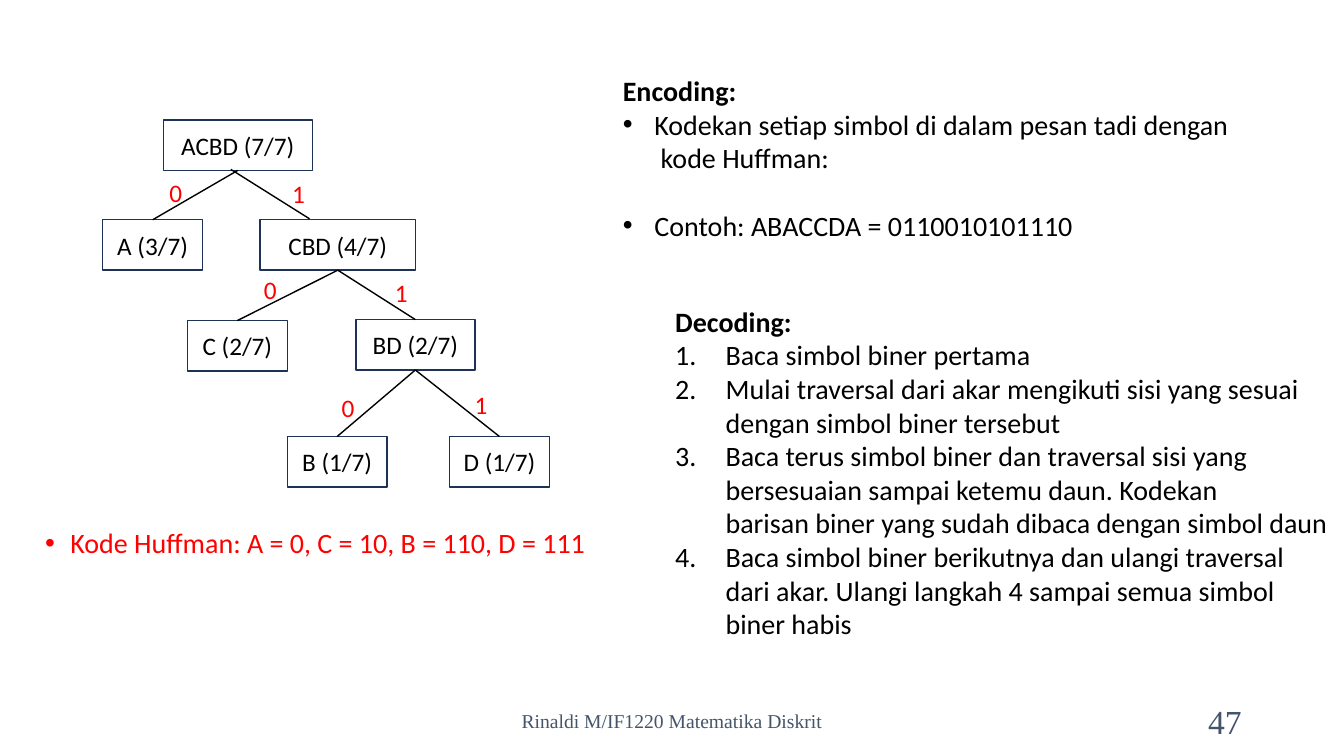
from dataclasses import dataclass

from lxml import etree
from pptx import Presentation
from pptx.dml.color import RGBColor
from pptx.enum import shapes, text
from pptx.oxml import ns
from pptx.util import Pt


@dataclass(frozen=True)
class Theme:
    ink: str = "000000"
    accent: str = "FF0000"
    outline: str = "1E3256"
    muted: str = "44546A"
    font: str = "Calibri"
    footer_font: str = "Times New Roman"
    body: int = 20
    node: int = 18
    footer: int = 14
    number: int = 24


THEME = Theme()
NODE_HEIGHT = 36
BULLET = ("buChar", {"char": "•"})
NUMBER = ("buAutoNum", {"type": "arabicPeriod"})

# Name: left, top, width, label
NODES = {
    "ACBD": (43.2, 0, 106.6, "ACBD (7/7)"),
    "A": (0, 71.3, 71.3, "A (3/7)"),
    "CBD": (112.4, 71.3, 111, "CBD (4/7)"),
    "C": (60.5, 143.3, 71.3, "C (2/7)"),
    "BD": (180.8, 142.6, 85, "BD (2/7)"),
    "B": (131.8, 226.1, 71.3, "B (1/7)"),
    "D": (247.7, 226.1, 71.3, "D (1/7)"),
}
# Parent, child, bit, left and top of the bit
EDGES = [
    ("ACBD", "A", "0", 40.4, 37.4),
    ("ACBD", "CBD", "1", 128.2, 38.1),
    ("CBD", "C", "0", 108, 106.6),
    ("CBD", "BD", "1", 201.6, 108.7),
    ("BD", "B", "0", 163.5, 190.8),
    ("BD", "D", "1", 258.5, 188.6),
]
# The edge from the root to CBD runs between points off the centres
ROOT_EDGE = (91.5, 35.3, 147.7, 70.6)

ENCODING = [
    ("Encoding:", dict(bold=True)),
    ("Kodekan setiap simbol di dalam pesan tadi dengan", dict(bullet=BULLET, left=22.5, hanging=22.5)),
    ("kode Huffman:", dict(left=27)),
    ("Contoh: ABACCDA = 0110010101110", dict(bullet=BULLET, left=22.5, hanging=22.5, before=24.4)),
]
STEPS = [
    "Baca simbol biner pertama",
    "Mulai traversal dari akar mengikuti sisi yang sesuai\vdengan simbol biner tersebut",
    "Baca terus simbol biner dan traversal sisi yang\vbersesuaian sampai ketemu daun. Kodekan\v"
    "barisan biner yang sudah dibaca dengan simbol daun",
    "Baca simbol biner berikutnya dan ulangi traversal\v"
    "dari akar. Ulangi langkah 4 sampai semua simbol\vbiner habis",
]
DECODING = [("Decoding:", dict(bold=True))] + [
    (step, dict(bullet=NUMBER, left=36, hanging=36)) for step in STEPS
]


def write(paragraph, content, *, size=THEME.body, color=THEME.ink, font=THEME.font, bold=False,
          align=text.PP_ALIGN.LEFT, bullet=None, left=0, hanging=0, before=0, spacing=None):
    """Fill one paragraph and format it."""
    paragraph.text = content
    paragraph.alignment = align
    properties = paragraph._p.get_or_add_pPr()
    if left:
        properties.set("marL", str(Pt(left)))
        properties.set("indent", str(-Pt(hanging)))
    if before:
        paragraph.space_before = Pt(before)
    if spacing:
        paragraph.line_spacing = spacing
    if bullet:
        tag, attributes = bullet
        if tag == "buChar":
            etree.SubElement(properties, ns.qn("a:buFont"), typeface="Arial")
        etree.SubElement(properties, ns.qn("a:" + tag), attributes)
    for run in paragraph.runs:
        run.font.size = Pt(size)
        run.font.name = font
        run.font.bold = bold
        run.font.color.rgb = RGBColor.from_string(color)


def add_text(slide, box, items, anchor=text.MSO_ANCHOR.TOP, wrap=True):
    """Add a text box with one paragraph for each (text, format) item."""
    frame = slide.shapes.add_textbox(*map(Pt, box)).text_frame
    frame.word_wrap = wrap
    frame.vertical_anchor = anchor
    for index, (content, style) in enumerate(items):
        paragraph = frame.add_paragraph() if index else frame.paragraphs[0]
        write(paragraph, content, **style)


def add_node(slide, left, top, width, label):
    node = slide.shapes.add_shape(
        shapes.MSO_SHAPE.RECTANGLE, Pt(left), Pt(top), Pt(width), Pt(NODE_HEIGHT))
    node.shadow.inherit = False
    node.fill.background()
    node.line.color.rgb = RGBColor.from_string(THEME.outline)
    node.line.width = Pt(1)
    node.text_frame.vertical_anchor = text.MSO_ANCHOR.MIDDLE
    node.text_frame.word_wrap = True
    write(node.text_frame.paragraphs[0], label, size=THEME.node, align=text.PP_ALIGN.CENTER)
    return node


def add_edge(slide, ends=(0, 0, 0, 0)):
    edge = slide.shapes.add_connector(shapes.MSO_CONNECTOR.STRAIGHT, *map(Pt, ends))
    edge.line.color.rgb = RGBColor.from_string(THEME.ink)
    edge.line.width = Pt(1)
    etree.SubElement(edge._element.spPr, ns.qn("a:effectLst"))
    return edge


def huffman_tree(slide, left, top):
    # Nodes
    nodes = {name: add_node(slide, left + x, top + y, width, label)
             for name, (x, y, width, label) in NODES.items()}
    # Edges and their bits
    for parent, child, bit, x, y in EDGES:
        if (parent, child) == ("ACBD", "CBD"):
            x1, y1, x2, y2 = ROOT_EDGE
            add_edge(slide, (left + x1, top + y1, left + x2, top + y2))
        else:
            edge = add_edge(slide)
            edge.begin_connect(nodes[parent], 2)
            edge.end_connect(nodes[child], 0)
        add_text(slide, (left + x, top + y, 24, 29),
                 [(bit, dict(size=THEME.node, color=THEME.accent))], wrap=False)


def code_summary(slide, box):
    add_text(slide, box, [("Kode Huffman: A = 0, C = 10, B = 110, D = 111",
                           dict(color=THEME.accent, bullet=BULLET, left=18, hanging=18, spacing=0.9))])


def footer(slide, left, top, height):
    style = dict(font=THEME.footer_font, color=THEME.muted)
    middle = text.MSO_ANCHOR.MIDDLE
    add_text(slide, (left, top, 324, height),
             [("Rinaldi M/IF1220 Matematika Diskrit",
               dict(style, size=THEME.footer, align=text.PP_ALIGN.CENTER))], middle)
    add_text(slide, (left + 360, top, 216, height),
             [("47", dict(style, size=THEME.number, align=text.PP_ALIGN.RIGHT))], middle)


def main():
    presentation = Presentation()
    presentation.slide_width, presentation.slide_height = Pt(960), Pt(540)
    slide = presentation.slides.add_slide(presentation.slide_layouts[6])

    footer(slide, 318, 500.4, 28.8)
    code_summary(slide, (25.2, 374.4, 499, 52))
    add_text(slide, (437.8, 49, 456, 128), ENCODING)
    add_text(slide, (475.2, 213.8, 484.8, 298), DECODING)
    huffman_tree(slide, 73.4, 85.7)

    presentation.save("out.pptx")


if __name__ == "__main__":
    main()
